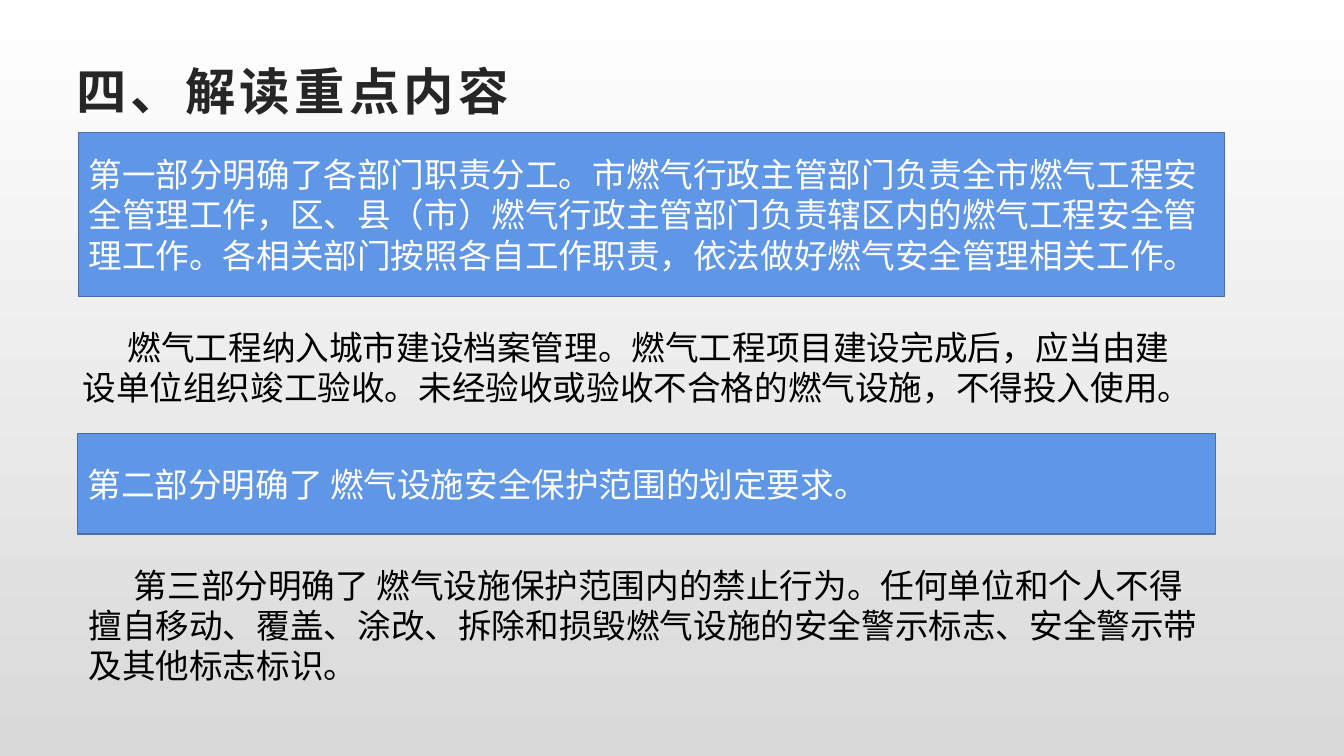
from pptx import Presentation
from pptx.dml.color import RGBColor
from pptx.enum.lang import MSO_LANGUAGE_ID
from pptx.enum.shapes import MSO_SHAPE
from pptx.enum.text import MSO_ANCHOR, PP_ALIGN
from pptx.util import Pt


def color(value):
    return RGBColor.from_string(value)


class SlideBuilder:
    font_name = "Arial"
    body_size = 24
    panel_fill = "6096E6"
    panel_line = "476FAA"

    def __init__(self, deck):
        self.page = deck.slides.add_slide(deck.slide_layouts[6])

    def background(self, top_color, bottom_color):
        fill = self.page.background.fill
        fill.gradient()
        fill.gradient_angle = 270
        for stop, value, position in zip(fill.gradient_stops, (top_color, bottom_color), (0, 1)):
            stop.color.rgb = color(value)
            stop.position = position

    def set_text(self, box, text, size, text_color, anchor, bold=False):
        frame = box.text_frame
        frame.word_wrap = True
        frame.vertical_anchor = anchor
        frame.text = text
        para = frame.paragraphs[0]
        para.alignment = PP_ALIGN.LEFT
        span = para.runs[0]
        span.font.name = self.font_name
        span.font.size = Pt(size)
        span.font.bold = bold
        span.font.color.rgb = color(text_color)
        span.font.language_id = MSO_LANGUAGE_ID.SIMPLIFIED_CHINESE
        return para

    def text_box(self, left, top, width, height):
        return self.page.shapes.add_textbox(Pt(left), Pt(top), Pt(width), Pt(height))

    def title(self, text, left, top, width, height):
        box = self.text_box(left, top, width, height)
        para = self.set_text(box, text, 36, "262626", MSO_ANCHOR.MIDDLE, bold=True)
        para.runs[0]._r.get_or_add_rPr().set("spc", "300")

    def panel(self, text, left, top, width, height):
        box = self.page.shapes.add_shape(
            MSO_SHAPE.RECTANGLE, Pt(left), Pt(top), Pt(width), Pt(height))
        box.shadow.inherit = False
        box.fill.solid()
        box.fill.fore_color.rgb = color(self.panel_fill)
        box.line.color.rgb = color(self.panel_line)
        box.line.width = Pt(1)
        self.set_text(box, text, self.body_size, "FFFFFF", MSO_ANCHOR.MIDDLE)

    def passage(self, text, left, top, width, height):
        box = self.text_box(left, top, width, height)
        para = self.set_text(box, text, self.body_size, "000000", MSO_ANCHOR.TOP)
        properties = para._p.get_or_add_pPr()
        properties.set("marL", "0")
        properties.set("indent", str(Pt(32.4)))


def main():
    deck = Presentation()
    deck.slide_width = Pt(960)
    deck.slide_height = Pt(540)

    slide = SlideBuilder(deck)
    slide.background("FFFFFF", "D9D9D9")
    slide.title("四、解读重点内容", 47.5, 38.2, 864, 53.3)
    slide.panel(
        "第一部分明确了各部门职责分工。市燃气行政主管部门负责全市燃气工程安全管理工作，"
        "区、县（市）燃气行政主管部门负责辖区内的燃气工程安全管理工作。"
        "各相关部门按照各自工作职责，依法做好燃气安全管理相关工作。",
        56.2, 94.5, 818.6, 117.2)
    slide.passage(
        "燃气工程纳入城市建设档案管理。燃气工程项目建设完成后，应当由建设单位组织竣工验收。"
        "未经验收或验收不合格的燃气设施，不得投入使用。",
        51.8, 229.7, 812.9, 65.5)
    slide.panel("第二部分明确了 燃气设施安全保护范围的划定要求。", 55.4, 309.6, 812.9, 72)
    slide.passage(
        "第三部分明确了 燃气设施保护范围内的禁止行为。任何单位和个人不得擅自移动、覆盖、"
        "涂改、拆除和损毁燃气设施的安全警示标志、安全警示带及其他标志标识。",
        56.2, 399.6, 812.9, 94.3)

    deck.save("out.pptx")


if __name__ == "__main__":
    main()
